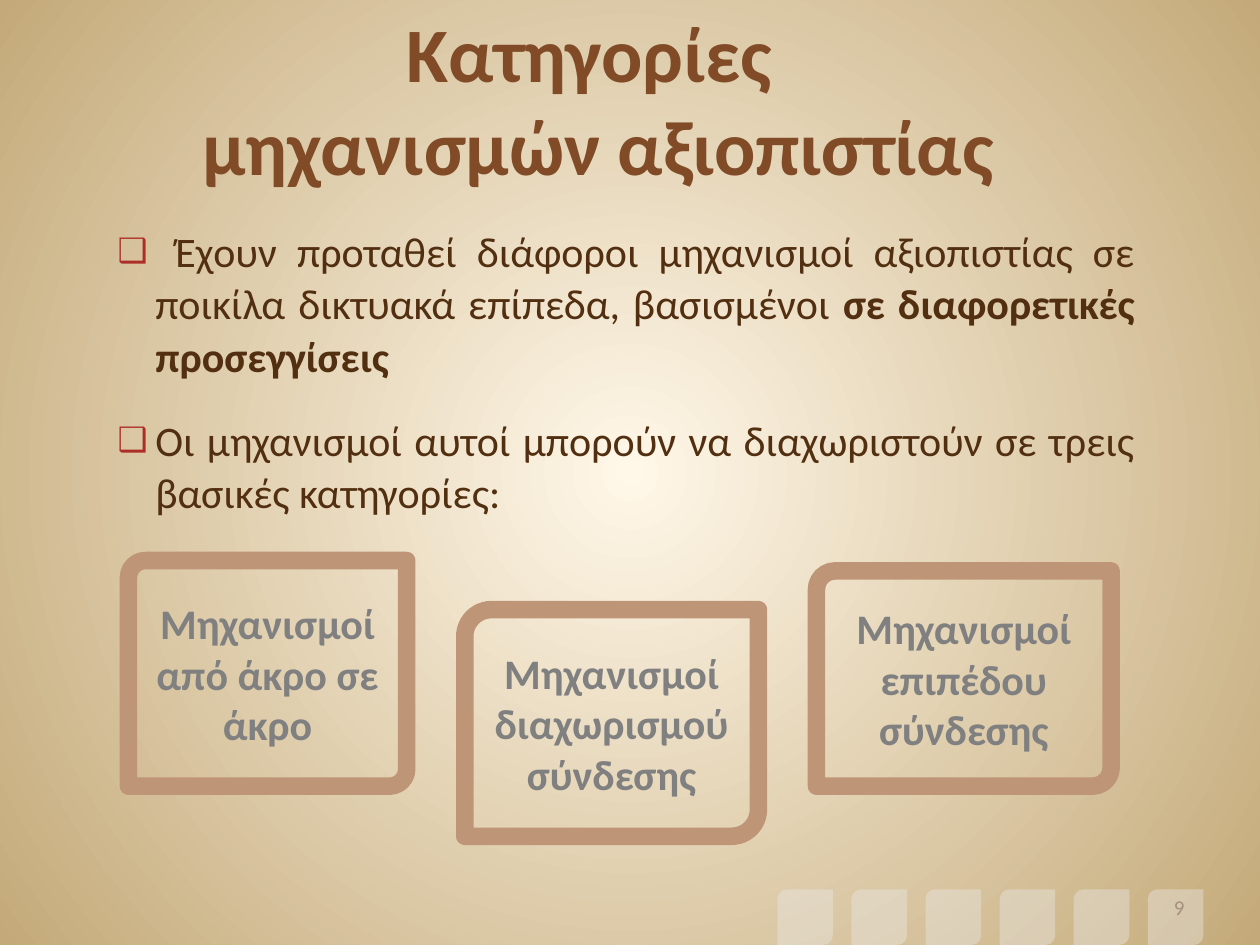
import pptx
import pptx.util
import pptx.dml.color
import pptx.enum.shapes
import pptx.enum.text
import pptx.oxml
import pptx.oxml.ns
import lxml.etree

Cm = pptx.util.Cm
Pt = pptx.util.Pt
qn = pptx.oxml.ns.qn
ALIGN = pptx.enum.text.PP_ALIGN
ANCHOR = pptx.enum.text.MSO_ANCHOR
DIAGONAL = pptx.enum.shapes.MSO_SHAPE.ROUND_2_DIAG_RECTANGLE

COLORS = {
    "center": "FFF7E8", "edge": "C4AA7A", "title": "804B26", "text": "522F10",
    "bullet": "AD2E27", "number": "795339", "frame": "BF9578",
    "label": "808080", "square": "EAEAEA",
}


def rgb(name):
    return pptx.dml.color.RGBColor.from_string(COLORS[name])


def style(paragraph, size, color, align, bold=False):
    paragraph.alignment = align
    for run in paragraph.runs:
        run.font.name = "Calibri"
        run.font.size = Pt(size)
        run.font.bold = bold
        run.font.color.rgb = rgb(color)


prs = pptx.Presentation()
prs.slide_width, prs.slide_height = Cm(25.4), Cm(19.05)
slide = prs.slides.add_slide(prs.slide_layouts[1])

# Background: circular gradient from the centre
background = slide.background.fill
background.gradient()
for stop, name, position in zip(background.gradient_stops, ("center", "edge"), (0, 1)):
    stop.color.rgb = rgb(name)
    stop.position = position
gradient = slide.element.find(".//" + qn("a:gradFill"))
gradient.remove(gradient.find(qn("a:lin")))
circle = lxml.etree.SubElement(gradient, qn("a:path"), path="circle")
lxml.etree.SubElement(circle, qn("a:fillToRect"), l="50000", t="50000", r="50000", b="50000")

# Title
title = slide.shapes.title
title.left, title.top, title.width, title.height = Cm(0), Cm(0.79), Cm(24.13), Cm(3.18)
title.text_frame.text = "Κατηγορίες \vμηχανισμών αξιοπιστίας"
title.text_frame.auto_size = pptx.enum.text.MSO_AUTO_SIZE.NONE
title.text_frame.vertical_anchor = ANCHOR.BOTTOM
style(title.text_frame.paragraphs[0], 44, "title", ALIGN.CENTER, True)

# Bulleted list
body = slide.placeholders[1]
body.left, body.top, body.width, body.height = Cm(1.78), Cm(4.37), Cm(21.23), Cm(13.28)
points = body.text_frame
points.auto_size = pptx.enum.text.MSO_AUTO_SIZE.NONE
points.margin_left = points.margin_right = points.margin_top = points.margin_bottom = Cm(0.13)
points.text = (
    " Έχουν προταθεί διάφοροι μηχανισμοί αξιοπιστίας σε ποικίλα δικτυακά επίπεδα, βασισμένοι \n"
    "Οι μηχανισμοί αυτοί μπορούν να διαχωριστούν σε τρεις βασικές κατηγορίες:"
)
emphasis = points.paragraphs[0].add_run()
emphasis.text = "σε διαφορετικές προσεγγίσεις"
for point, space_before in zip(points.paragraphs, (0, 12)):
    style(point, 24, "text", ALIGN.JUSTIFY)
    point.line_spacing = Pt(30)
    point.space_before = Pt(space_before)
    point.space_after = Pt(6)
    properties = point._p.get_or_add_pPr()
    properties.set("marL", str(Cm(1.22)))
    properties.set("indent", str(-Cm(0.76)))
    bullet_color = lxml.etree.SubElement(properties, qn("a:buClr"))
    lxml.etree.SubElement(bullet_color, qn("a:srgbClr"), val=COLORS["bullet"])
    lxml.etree.SubElement(properties, qn("a:buSzPct"), val="80000")
    lxml.etree.SubElement(properties, qn("a:buChar"), char="❑")
emphasis.font.bold = True

# Slide number, behind the corner squares
number = slide.shapes.add_textbox(Cm(18.21), Cm(17.35), Cm(5.92), Cm(1.32)).text_frame
number.word_wrap = True
number.vertical_anchor = ANCHOR.BOTTOM
number.text = "9"
style(number.paragraphs[0], 12, "number", ALIGN.RIGHT)

# Three categories
categories = [
    ("Μηχανισμοί από άκρο σε άκρο", 2.59, 11.3, 5.61, 4.55, 0.076),
    ("Μηχανισμοί διαχωρισμού σύνδεσης", 9.37, 12.29, 5.92, 4.57, 0.118),
    ("Μηχανισμοί επιπέδου σύνδεσης", 16.46, 11.51, 5.94, 4.34, 0.086),
]
for label, left, top, width, height, corner in categories:
    category = slide.shapes.add_shape(DIAGONAL, Cm(left), Cm(top), Cm(width), Cm(height))
    category.adjustments[0] = corner
    category.shadow.inherit = False
    category.fill.background()
    category.line.color.rgb = rgb("frame")
    category.line.width = Pt(10)
    category.text_frame.word_wrap = True
    category.text_frame.vertical_anchor = ANCHOR.MIDDLE
    category.text_frame.text = label
    style(category.text_frame.paragraphs[0], 24, "label", ALIGN.CENTER, True)

# Row of translucent squares
squares = slide.shapes.add_group_shape()
for i in range(6):
    square = squares.shapes.add_shape(
        DIAGONAL, Cm(15.67 + 7.47 * i / 5), Cm(17.93), Cm(1.12), Cm(1.12))
    square.adjustments[0] = 0.17
    square.shadow.inherit = False
    square.line.fill.background()
    square.fill.solid()
    square.fill.fore_color.rgb = rgb("square")
    tint = square._element.spPr.find(qn("a:solidFill") + "/" + qn("a:srgbClr"))
    lxml.etree.SubElement(tint, qn("a:alpha"), val="40000")

prs.save("out.pptx")
